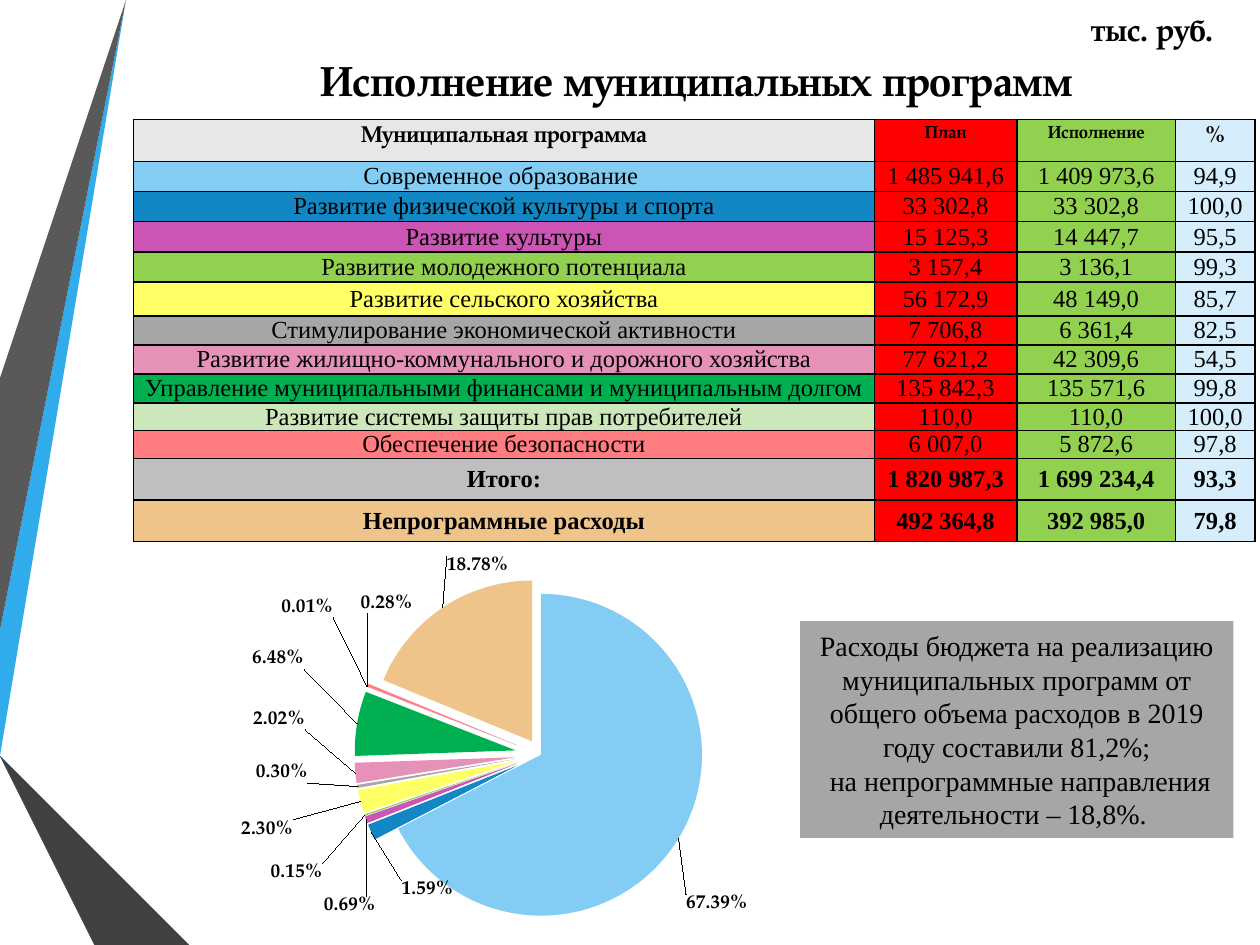
import math
from typing import NamedTuple

import pptx
import pptx.chart.data
import pptx.dml.color
import pptx.enum.chart
import pptx.enum.shapes
import pptx.enum.text
import pptx.oxml
import pptx.oxml.ns
import pptx.util

Inches, Pt = pptx.util.Inches, pptx.util.Pt
RGB = pptx.dml.color.RGBColor
ALIGN, ANCHOR = pptx.enum.text.PP_ALIGN, pptx.enum.text.MSO_ANCHOR

BLACK, RED, GREEN = RGB(0, 0, 0), RGB(0xFF, 0, 0), RGB(0x92, 0xD0, 0x50)
PALE_BLUE, LIGHT_GRAY = RGB(0xD6, 0xEE, 0xFB), RGB(0xE7, 0xE7, 0xE7)
GRAY, SILVER = RGB(0xA6, 0xA6, 0xA6), RGB(0xBF, 0xBF, 0xBF)
SKY, BLUE = RGB(0x83, 0xCD, 0xF4), RGB(0x12, 0x87, 0xC3)
PURPLE, YELLOW, PINK = RGB(0xCC, 0x54, 0xB5), RGB(0xFF, 0xFF, 0x66), RGB(0xE6, 0x91, 0xB7)
EMERALD, MINT = RGB(0, 0xB0, 0x50), RGB(0xCC, 0xE7, 0xB9)
CORAL, SAND = RGB(0xFF, 0x7C, 0x80), RGB(0xEE, 0xC4, 0x8B)
STEEL, AZURE = RGB(0x5A, 0x9E, 0xDC), RGB(0x30, 0xAC, 0xEC)
NAVY, DARK_GRAY = RGB(0x0C, 0x5A, 0x82), RGB(0x59, 0x59, 0x59)
CHARCOAL, NEAR_BLACK = RGB(0x40, 0x40, 0x40), RGB(0x26, 0x26, 0x26)

SERIF, PALATINO = "Times New Roman", "TeX Gyre Pagella"
BODY = {"name": SERIF, "size": Pt(14), "bold": False}
TOTAL = BODY | {"bold": True}
HEAD = {"name": PALATINO, "size": Pt(13), "bold": True}
SMALL_HEAD = HEAD | {"size": Pt(10)}


class Ribbon(NamedTuple):
    color: RGB
    points: list[tuple[float, float]]


class Row(NamedTuple):
    height: float
    color: RGB
    texts: tuple[str, str, str, str]


class Slice(NamedTuple):
    value: float
    color: RGB
    label_x: float
    label_y: float
    explosion: int = 16


RIBBONS = [
    Ribbon(AZURE, [(0, 5.44), (0, 5.75), (0.22, 5.79), (1.17, 0), (0.89, 0)]),
    Ribbon(DARK_GRAY, [(0.83, 0), (0.55, 0), (0, 3.36), (0, 5.06)]),
    Ribbon(NEAR_BLACK, [(0, 6.19), (0, 6.21), (0.93, 7.5), (0.99, 7.5)]),
    Ribbon(NAVY, [(0, 5.79), (0, 5.8), (1.56, 7.5), (1.63, 7.5)]),
    Ribbon(BLUE, [(0, 5.79), (1.63, 7.5), (2.33, 7.5), (0.22, 5.79), (0, 5.75)]),
    Ribbon(CHARCOAL, [(0, 6.19), (0.99, 7.5), (1.51, 7.5), (0, 5.86)]),
]
ROWS = [
    Row(0.33, LIGHT_GRAY, ("Муниципальная программа", "План", "Исполнение", "%")),
    Row(0.24, SKY, ("Современное образование ", "1 485 941,6", "1 409 973,6", "94,9")),
    Row(0.24, BLUE, ("Развитие физической культуры и спорта", "33 302,8", "33 302,8", "100,0")),
    Row(0.24, PURPLE, ("Развитие культуры", "15 125,3", "14 447,7", "95,5")),
    Row(0.24, GREEN, ("Развитие молодежного потенциала", "3 157,4", "3 136,1", "99,3")),
    Row(0.27, YELLOW, ("Развитие сельского хозяйства", "56 172,9", "48 149,0", "85,7")),
    Row(0.23, GRAY, ("Стимулирование экономической активности", "7 706,8", "6 361,4", "82,5")),
    Row(0.23, PINK, ("Развитие жилищно-коммунального и дорожного хозяйства",
                     "77 621,2", "42 309,6", "54,5")),
    Row(0.23, EMERALD, ("Управление муниципальными финансами и муниципальным долгом",
                        "135 842,3", "135 571,6", "99,8")),
    Row(0.22, MINT, ("Развитие системы защиты прав потребителей", "110,0", "110,0", "100,0")),
    Row(0.22, CORAL, ("Обеспечение безопасности", "6 007,0", "5 872,6", "97,8")),
    Row(0.33, SILVER, ("Итого:", "1 820 987,3", "1 699 234,4", "93,3")),
    Row(0.33, SAND, ("Непрограммные расходы", "492 364,8", "392 985,0", "79,8")),
]
COLUMNS = [5.88, 1.13, 1.26, 0.63]
SLICES = [
    Slice(0.6739, SKY, 5.51, 7.1, 0),
    Slice(0.0159, BLUE, 3.56, 7),
    Slice(0.0069, PURPLE, 2.95, 7.14),
    Slice(0.0015, GREEN, 2.53, 6.88),
    Slice(0.023, YELLOW, 2.3, 6.55),
    Slice(0.003, GRAY, 2.42, 6.12),
    Slice(0.0202, PINK, 2.4, 5.71),
    Slice(0.0648, EMERALD, 2.39, 5.25),
    Slice(0.0001, STEEL, 2.61, 4.88),
    Slice(0.0028, CORAL, 3.24, 4.85),
    Slice(0.1878, SAND, 3.92, 4.48, 10),
]
CHART_X, CHART_Y, CHART_W, CHART_H = 0.67, 4.41, 5.7, 3.07
PIE_X, PIE_Y, PIE_R = 4.29, 5.99, 1.1
LABEL_W, LABEL_H, LABEL_GAP = 0.44, 0.19, 0.06


def xml(body: str):
    """Parse a fragment whose root takes the namespace of its prefix."""
    root, rest = body[1:].split(">", 1)
    slash = "/" if root.endswith("/") else ""
    ns = pptx.oxml.ns.nsdecls(body[1])
    return pptx.oxml.parse_xml(f"<{root.rstrip('/')} {ns}{slash}>{rest}")


def set_font(font, values: dict) -> None:
    for key, value in values.items():
        setattr(font, key, value)
    font.color.rgb = BLACK


def write(tf, texts: list[str], font: dict, align=ALIGN.CENTER) -> None:
    for i, text in enumerate(texts):
        p = tf.add_paragraph() if i else tf.paragraphs[0]
        p.alignment = align
        r = p.add_run()
        r.text = text
        set_font(r.font, font)


def paint(sp, color: RGB) -> None:
    sp.shadow.inherit = False
    sp.fill.solid()
    sp.fill.fore_color.rgb = color
    sp.line.fill.background()


def add_ribbon(s, ribbon: Ribbon) -> None:
    builder = s.shapes.build_freeform(*ribbon.points[0], scale=float(Inches(1)))
    builder.add_line_segments(ribbon.points[1:], close=True)
    paint(builder.convert_to_shape(), ribbon.color)


def add_text(s, box: tuple, text: str, font: dict, align, wrap: bool) -> None:
    tf = s.shapes.add_textbox(*map(Inches, box)).text_frame
    tf.word_wrap = wrap
    tf.vertical_anchor = ANCHOR.MIDDLE
    write(tf, [text], font, align)


def fill_cell(cell, text: str, color: RGB, font: dict) -> None:
    write(cell.text_frame, [text], font)
    if font is BODY:
        cell.margin_left = cell.margin_right = Inches(0.07)
        cell.margin_top = cell.margin_bottom = 0
    if font in (BODY, TOTAL):
        cell.vertical_anchor = ANCHOR.MIDDLE
    for side in ("lnL", "lnR", "lnT", "lnB"):
        cell._tc.get_or_add_tcPr().append(xml(
            f'<a:{side} w="12700"><a:solidFill><a:srgbClr val="{BLACK}"/></a:solidFill></a:{side}>'))
    cell.fill.solid()
    cell.fill.fore_color.rgb = color


def add_programme_table(s) -> None:
    box = (1.06, 0.95, sum(COLUMNS), sum(row.height for row in ROWS))
    table = s.shapes.add_table(len(ROWS), len(COLUMNS), *map(Inches, box)).table
    table.first_row = table.horz_banding = False
    for column, width in zip(table.columns, COLUMNS):
        column.width = Inches(width)
    for i, row in enumerate(ROWS):
        table.rows[i].height = Inches(row.height)
        fonts = [BODY] * 4 if i < len(ROWS) - 2 else [TOTAL] * 4
        if i == 0:
            fonts = [HEAD, SMALL_HEAD, SMALL_HEAD, HEAD]
        colors = (row.color, RED, GREEN, PALE_BLUE)
        for j, (text, color, font) in enumerate(zip(row.texts, colors, fonts)):
            fill_cell(table.cell(i, j), text, color, font)


def label_offset(part: Slice, start: float) -> tuple[float, float]:
    """Shift of a label from its place at the rim, as shares of the chart size."""
    angle = 2 * math.pi * (start + part.value / 2)
    dx, dy = math.sin(angle), -math.cos(angle)
    reach = PIE_R * (1 + part.explosion / 100) + LABEL_GAP
    x = PIE_X + reach * dx + math.copysign(LABEL_W / 2, dx)
    y = PIE_Y + reach * dy + math.copysign(LABEL_H / 2, dy)
    return (part.label_x - x) / CHART_W, (part.label_y - y) / CHART_H


def add_share_chart(s) -> None:
    data = pptx.chart.data.CategoryChartData(number_format="0.00%")
    data.categories = [str(i + 1) for i in range(len(SLICES))]
    data.add_series("Series 1", [part.value for part in SLICES])
    box = map(Inches, (CHART_X, CHART_Y, CHART_W, CHART_H))
    chart = s.shapes.add_chart(pptx.enum.chart.XL_CHART_TYPE.PIE, *box, data).chart
    chart.has_legend = chart.has_title = False
    set_font(chart.font, {"name": "Cabin", "size": Pt(18)})
    area = chart._chartSpace.chart.plotArea
    for layout in area.findall(pptx.oxml.ns.qn("c:layout")):
        area.remove(layout)
    area.insert(0, xml(
        '<c:layout><c:manualLayout><c:layoutTarget val="inner"/><c:xMode val="edge"/>'
        '<c:yMode val="edge"/><c:x val="0.274"/><c:y val="0.099"/><c:w val="0.724"/>'
        '<c:h val="0.832"/></c:manualLayout></c:layout>'))
    label_font = {"name": PALATINO, "size": Pt(11), "bold": True}
    series = chart.plots[0].series[0]
    labels = series.data_labels
    labels.show_value = True
    labels.number_format, labels.number_format_is_linked = "0.00%", False
    set_font(labels.font, label_font)
    start = 0.0
    for i, part in enumerate(SLICES):
        point = series.points[i]
        point.format.fill.solid()
        point.format.fill.fore_color.rgb = part.color
        point.format.line.fill.background()
        dpt = next(d for d in series._element.dPt_lst if d.idx.val == i)
        dpt.find(pptx.oxml.ns.qn("c:spPr")).addprevious(
            xml(f'<c:explosion val="{part.explosion}"/>'))
        set_font(point.data_label.font, label_font)
        point.data_label.position = pptx.enum.chart.XL_LABEL_POSITION.OUTSIDE_END
        x, y = label_offset(part, start)
        labels._element.dLbl_lst[i].idx.addnext(xml(
            f'<c:layout><c:manualLayout><c:x val="{x:.4f}"/><c:y val="{y:.4f}"/>'
            '</c:manualLayout></c:layout>'))
        start += part.value
    for old in labels._element.findall(pptx.oxml.ns.qn("c:showLeaderLines")):
        labels._element.remove(old)
    labels._element.append(xml('<c:showLeaderLines val="1"/>'))


def add_summary(s) -> None:
    box = map(Inches, (6.35, 4.93, 3.44, 1.72))
    sp = s.shapes.add_shape(pptx.enum.shapes.MSO_SHAPE.RECTANGLE, *box)
    paint(sp, GRAY)
    sp.text_frame.word_wrap = True
    write(sp.text_frame, [
        "Расходы бюджета на реализацию муниципальных программ от общего объема "
        "расходов в 2019 году составили 81,2%;",
        " на непрограммные направления деятельности – 18,8%. "], BODY | {"size": Pt(16)})


def main() -> None:
    prs = pptx.Presentation()
    prs.slide_width, prs.slide_height = Inches(10), Inches(7.5)
    s = prs.slides.add_slide(prs.slide_layouts[6])
    for ribbon in RIBBONS:
        add_ribbon(s, ribbon)
    add_programme_table(s)
    add_text(s, (1.06, 0.38, 8.94, 0.5), "Исполнение муниципальных программ",
             HEAD | {"size": Pt(24)}, ALIGN.CENTER, True)
    add_share_chart(s)
    add_summary(s)
    add_text(s, (8.56, 0.03, 1.31, 0.4), "тыс. руб.",
             HEAD | {"size": Pt(18)}, ALIGN.LEFT, False)
    prs.save("out.pptx")


if __name__ == "__main__":
    main()
